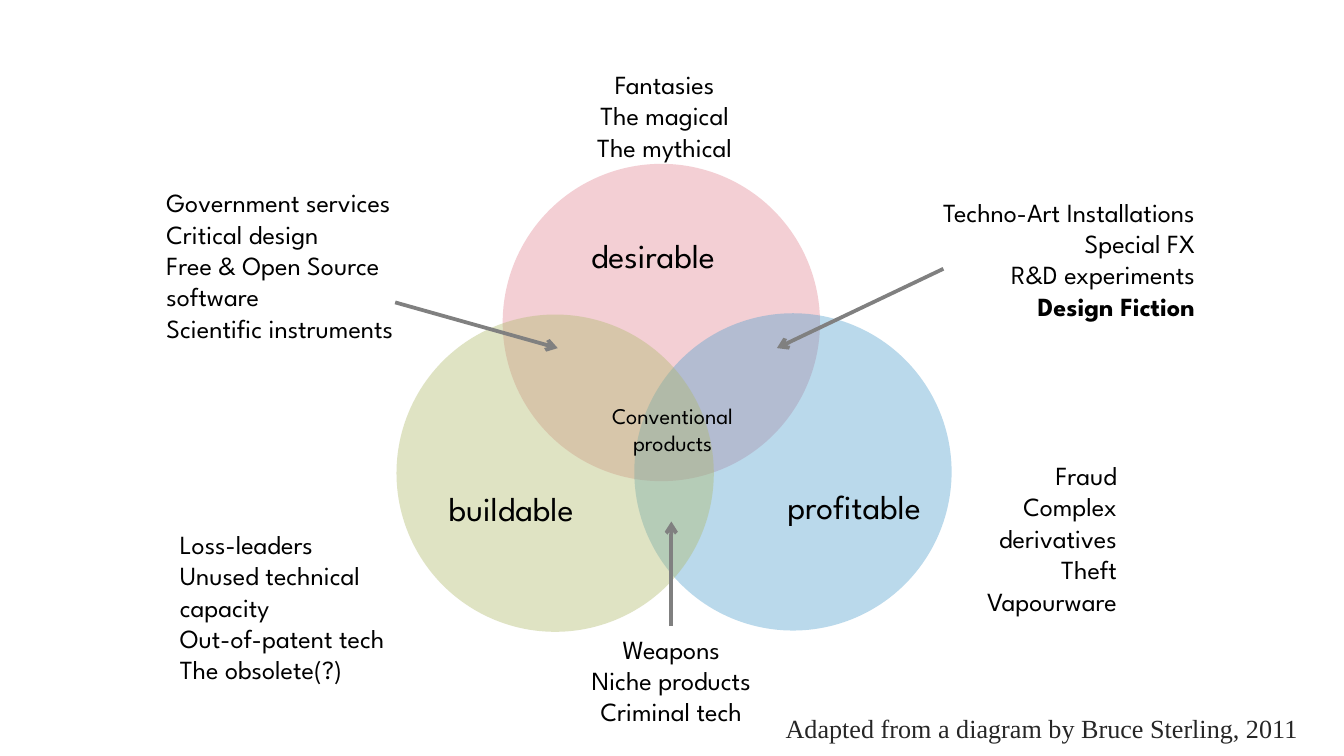
from lxml import etree
from pptx import Presentation
from pptx import util as u
from pptx.dml.color import RGBColor
from pptx.enum import shapes, text
from pptx.oxml import ns

COLORS = {"desirable": "E38794", "profitable": "54A0CE", "buildable": "AFB96B",
          "arrow": "808080", "text": "000000", "credit": "262626"}
SANS, SERIF = "League Spartan", "Times New Roman"
LEFT, CENTER, RIGHT = text.PP_ALIGN.LEFT, text.PP_ALIGN.CENTER, text.PP_ALIGN.RIGHT

# Circles, back to front: name, left, top
DIAMETER, OPACITY = 170, 40
CIRCLES = [("desirable", 269.3, 87.8), ("profitable", 339.8, 167.8), ("buildable", 212.4, 168.5)]

# Circle names: text, left, top, width
NAMES = [("buildable", 233.3, 257.8, 87.1), ("profitable", 414.7, 257, 89.3),
         ("desirable", 309.6, 122.4, 88.6)]

# Examples: lines, (left, top, width, height), alignment, wrap
EXAMPLES = {
    "desirable and buildable": (
        ["Government services", "Critical design", "Free & Open Source software",
         "Scientific instruments"], (82.1, 96.5, 147.6, 94.3), LEFT, True),
    "desirable and profitable": (
        ["Techno-Art Installations", "Special FX", "R&D experiments", "Design Fiction"],
        (497.5, 101.5, 149.8, 92.2), RIGHT, True),
    "desirable": (
        ["Fantasies", "The magical", "The mythical"], (297.4, 33.1, 117.4, 58.3), CENTER, True),
    "buildable": (
        ["Loss-leaders", "Unused technical capacity", "Out-of-patent tech", "The obsolete(?)"],
        (89.3, 279.4, 151.2, 92.2), LEFT, True),
    "buildable and profitable": (
        ["Weapons", "Niche products", "Criminal tech"], (305.3, 335.5, 108.7, 58.3), CENTER, False),
    "profitable": (
        ["Fraud", "Complex derivatives", "Theft", "Vapourware"],
        (485.3, 242.6, 120.2, 92.2), RIGHT, True),
}
BOLD_LINES = {"Design Fiction"}

# Arrows: from x, y, to x, y
SIDE_ARROWS = [(211.7, 162, 298.8, 186.5), (505.4, 144, 416.2, 186.5)]
LOWER_ARROW_TIP = 279.4


def points(*lengths):
    return [u.Pt(length) for length in lengths]


def add_text(slide, lines, box, size, alignment=LEFT, wrap=True, grow=True,
             font=SANS, color="text"):
    shape = slide.shapes.add_textbox(*points(*box))
    frame = shape.text_frame
    frame.word_wrap = wrap
    frame.auto_size = text.MSO_AUTO_SIZE.SHAPE_TO_FIT_TEXT if grow else text.MSO_AUTO_SIZE.NONE
    frame.text = "\n".join(lines)
    for paragraph in frame.paragraphs:
        paragraph.alignment = alignment
        run = paragraph.runs[0]
        formats = {"name": font, "size": u.Pt(size), "bold": run.text in BOLD_LINES}
        for attribute, value in formats.items():
            setattr(run.font, attribute, value)
        run.font.color.rgb = RGBColor.from_string(COLORS[color])
    return shape


def add_arrow(slide, *ends):
    arrow = slide.shapes.add_connector(shapes.MSO_CONNECTOR.STRAIGHT, *points(*ends))
    arrow.line.width = u.Pt(2)
    arrow.line.color.rgb = RGBColor.from_string(COLORS["arrow"])
    etree.SubElement(arrow.line._get_or_add_ln(), ns.qn("a:tailEnd"), type="arrow")
    etree.SubElement(arrow._element.spPr, ns.qn("a:effectLst"))
    return arrow


def main():
    presentation = Presentation()
    presentation.slide_width, presentation.slide_height = points(720, 405)
    slide = presentation.slides.add_slide(presentation.slide_layouts[6])

    # Overlapping circles
    for name, left, top in CIRCLES:
        circle = slide.shapes.add_shape(
            shapes.MSO_SHAPE.OVAL, *points(left, top, DIAMETER, DIAMETER))
        circle.shadow.inherit = False
        circle.line.fill.background()
        circle.fill.solid()
        circle.fill.fore_color.rgb = RGBColor.from_string(COLORS[name])
        color = circle._element.spPr.find(".//" + ns.qn("a:srgbClr"))
        etree.SubElement(color, ns.qn("a:alpha"), val=str(OPACITY * 1000))

    # Labels inside the circles
    add_text(slide, ["Conventional products"], (313.9, 211.7, 92.9, 41.8), 12, CENTER, grow=False)
    for name, left, top, width in NAMES:
        add_text(slide, [name], (left, top, width, 28.8), 18, wrap=False)

    # Examples around the circles
    boxes = {area: add_text(slide, lines, box, 14, alignment, wrap)
             for area, (lines, box, alignment, wrap) in EXAMPLES.items()}

    # Arrows into the overlaps
    for ends in SIDE_ARROWS:
        add_arrow(slide, *ends)
    lower_box = boxes["buildable and profitable"]
    middle = (lower_box.left + lower_box.width / 2) / u.Pt(1)
    arrow = add_arrow(slide, middle, lower_box.top.pt, middle, LOWER_ARROW_TIP)
    arrow.begin_connect(lower_box, 0)

    # Credit line
    add_text(slide, ["Adapted from a diagram by Bruce Sterling, 2011"],
             (411.8, 378, 290.9, 24.5), 14, RIGHT, wrap=False, font=SERIF, color="credit")

    presentation.save("out.pptx")


if __name__ == "__main__":
    main()
